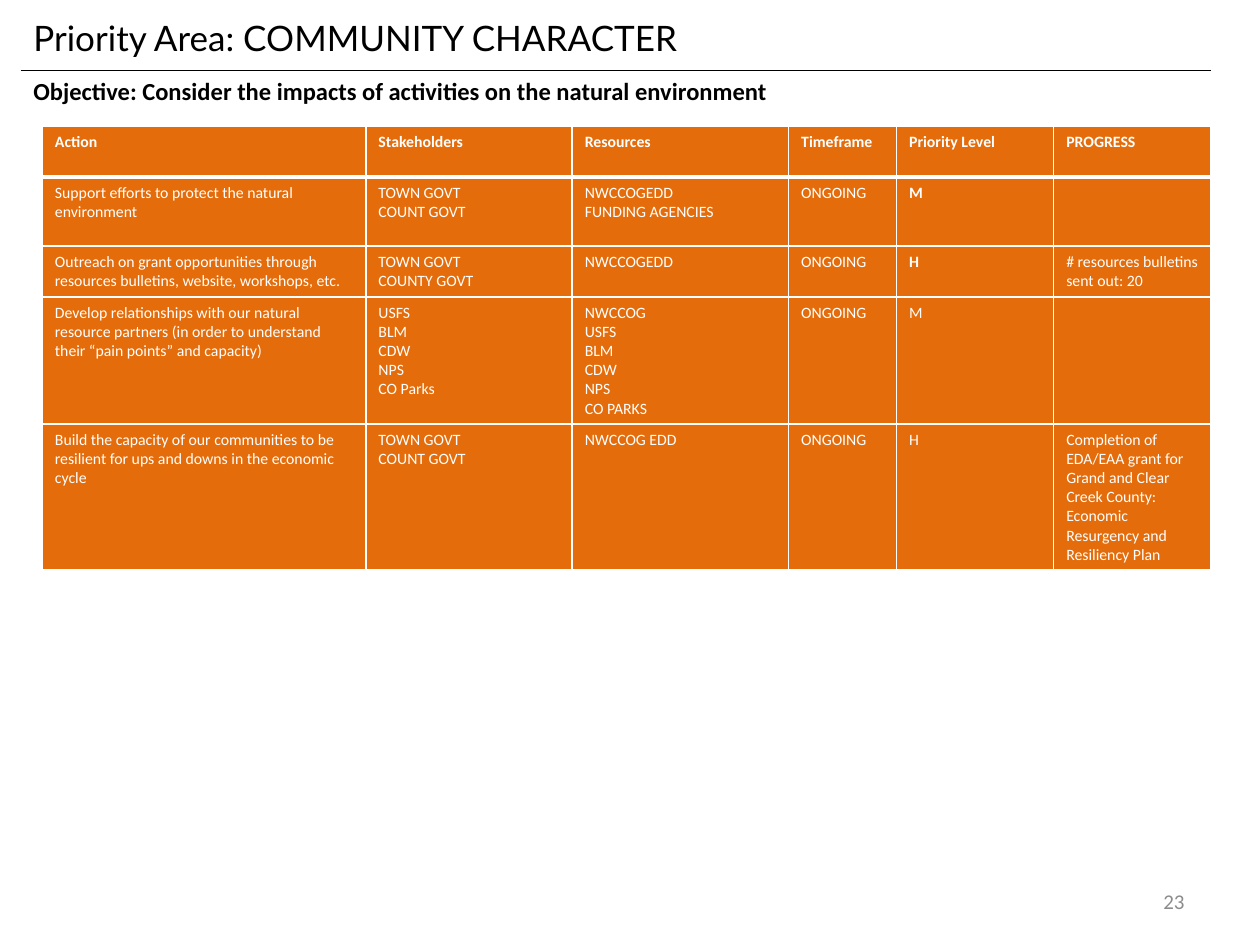
from typing import NamedTuple

from lxml.etree import SubElement
from pptx import Presentation
from pptx.dml.color import RGBColor
from pptx.enum.shapes import MSO_CONNECTOR as Connector
from pptx.enum.text import MSO_ANCHOR as Anchor, PP_ALIGN as Align
from pptx.oxml.ns import qn
from pptx.util import Pt

BLACK = RGBColor(0x00, 0x00, 0x00)
WHITE = RGBColor(0xFF, 0xFF, 0xFF)
GRAY = RGBColor(0x8C, 0x8C, 0x8C)
ORANGE = RGBColor(0xE4, 0x6C, 0x0A)

COLUMN_WIDTHS = (184.9, 117.9, 123.7, 61.7, 89.8, 89.8)
HEADINGS = ("Action", "Stakeholders", "Resources", "Timeframe", "Priority Level", "PROGRESS")
HEADING_HEIGHT = 29.2


class Style(NamedTuple):
    font: str
    size: float
    color: RGBColor
    bold: bool = False


class Action(NamedTuple):
    height: float
    action: str
    stakeholders: str
    resources: str
    priority: str
    progress: str = ""
    bold_priority: bool = False
    timeframe: str = "ONGOING"

    def texts(self) -> tuple[str, ...]:
        return (self.action, self.stakeholders, self.resources,
                self.timeframe, self.priority, self.progress)


TITLE = Style("Lato", 20, BLACK)
OBJECTIVE = Style("Calibri", 14, BLACK, True)
PAGE_NUMBER = Style("Calibri", 12, GRAY)
BODY = Style("Calibri", 9, WHITE)
STRONG = BODY._replace(bold=True)

ACTIONS = (
    Action(39.4, "Support efforts to protect the natural environment",
           "TOWN GOVT\nCOUNT GOVT", "NWCCOGEDD\nFUNDING AGENCIES", "M", bold_priority=True),
    Action(29.2, "Outreach on grant opportunities through resources bulletins, "
           "website, workshops, etc.",
           "TOWN GOVT\nCOUNTY GOVT", "NWCCOGEDD", "H",
           "# resources bulletins sent out: 20", bold_priority=True),
    Action(72.6, "Develop relationships with our natural resource partners "
           "(in order to understand their “pain points” and capacity)",
           "USFS\nBLM\nCDW\nNPS\nCO Parks",
           "NWCCOG\nUSFS\nBLM\nCDW\nNPS\nCO PARKS", "M"),
    Action(82.9, "Build the capacity of our communities to be resilient "
           "for ups and downs in the economic cycle",
           "TOWN GOVT\nCOUNT GOVT", "NWCCOG EDD", "H",
           "Completion of EDA/EAA grant for Grand and Clear Creek County: "
           "Economic Resurgency and Resiliency Plan"),
)


def style_paragraph(para, style: Style) -> None:
    para.font.name = style.font
    para.font.size = Pt(style.size)
    para.font.bold = style.bold
    para.font.color.rgb = style.color


def add_text(page, left: float, top: float, width: float, height: float,
             lines: list[tuple[str, Style]]):
    """Add a wrapping text box with one paragraph per line; return its frame."""
    box = page.shapes.add_textbox(Pt(left), Pt(top), Pt(width), Pt(height))
    frame = box.text_frame
    frame.word_wrap = True
    frame.text = "\n".join(text for text, _ in lines)
    for para, (_, style) in zip(frame.paragraphs, lines):
        style_paragraph(para, style)
    return frame


def add_border(cell, side: str, width: float) -> None:
    line = SubElement(cell._tc.get_or_add_tcPr(), qn(f"a:{side}"), w=str(Pt(width)))
    SubElement(SubElement(line, qn("a:solidFill")), qn("a:srgbClr"), val=str(WHITE))


def fill_cell(cell, text: str, style: Style, top: float, bottom: float) -> None:
    """Write a cell and draw its borders, top and bottom given as line widths."""
    cell.text = text
    for para in cell.text_frame.paragraphs:
        style_paragraph(para, style)
    for side, width in (("lnL", 1), ("lnR", 1), ("lnT", top), ("lnB", bottom)):
        add_border(cell, side, width)
    cell.fill.solid()
    cell.fill.fore_color.rgb = ORANGE


def add_action_table(page, left: float, top: float) -> None:
    heights = (HEADING_HEIGHT, *(action.height for action in ACTIONS))
    table = page.shapes.add_table(
        len(heights), len(COLUMN_WIDTHS), Pt(left), Pt(top),
        Pt(sum(COLUMN_WIDTHS)), Pt(sum(heights))).table
    for column, width in zip(table.columns, COLUMN_WIDTHS):
        column.width = Pt(width)
    for row, height in zip(table.rows, heights):
        row.height = Pt(height)
    for column, heading in enumerate(HEADINGS):
        fill_cell(table.cell(0, column), heading, STRONG, 1, 3)
    priority_column = HEADINGS.index("Priority Level")
    for row, action in enumerate(ACTIONS, start=1):
        for column, text in enumerate(action.texts()):
            strong = action.bold_priority and column == priority_column
            fill_cell(table.cell(row, column), text, STRONG if strong else BODY,
                      3 if row == 1 else 1, 1)


def add_rule(page, left: float, right: float, top: float) -> None:
    rule = page.shapes.add_connector(
        Connector.STRAIGHT, Pt(left), Pt(top), Pt(right), Pt(top))
    rule.line.color.rgb = BLACK
    rule.line.width = Pt(0.75)
    SubElement(rule._element.spPr, qn("a:effectLst"))


def main() -> None:
    deck = Presentation()
    deck.slide_width, deck.slide_height = Pt(720), Pt(540)
    page = deck.slides.add_slide(deck.slide_layouts[6])

    heading = add_text(page, 12, 6, 684, 58, [
        ("Priority Area: COMMUNITY CHARACTER", TITLE),
        ("Objective: Consider the impacts of activities on the natural environment", OBJECTIVE),
    ])
    heading.paragraphs[1].space_before = Pt(10)
    add_action_table(page, 24.2, 72)
    add_rule(page, 12, 692, 40.3)

    number = add_text(page, 516, 500.5, 168, 28.8, [("23", PAGE_NUMBER)])
    number.vertical_anchor = Anchor.MIDDLE
    number.paragraphs[0].alignment = Align.RIGHT

    deck.save("out.pptx")


if __name__ == "__main__":
    main()
